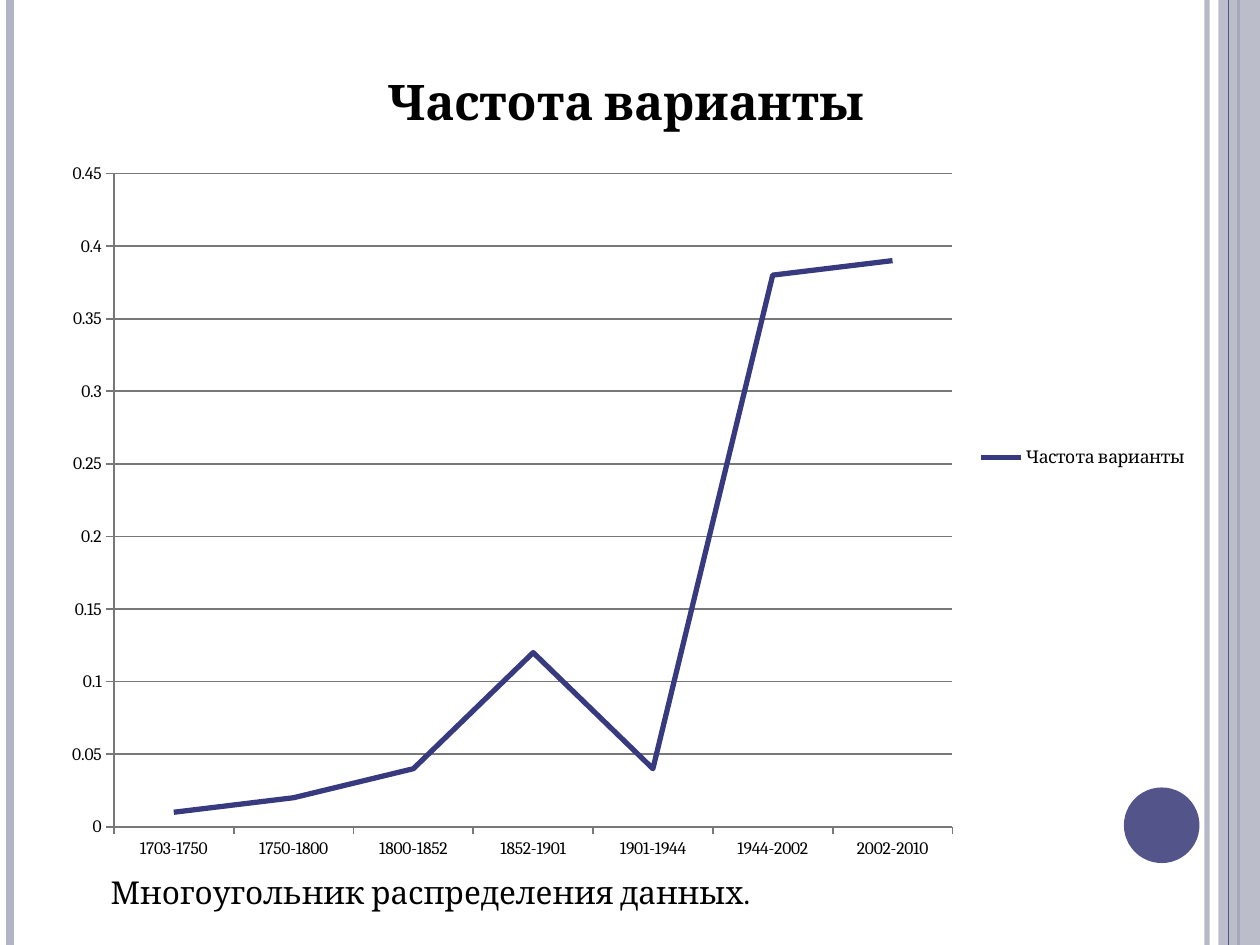
from dataclasses import dataclass

from lxml import etree
from pptx import Presentation
from pptx import util as u
from pptx.chart.data import CategoryChartData
from pptx.dml.color import RGBColor
from pptx.enum import chart as ch
from pptx.enum import shapes, text
from pptx.oxml.ns import qn

WIDTH, HEIGHT = u.Inches(10), u.Inches(7.5)


@dataclass(frozen=True)
class Theme:
    font: str = "Cambria"
    ink: RGBColor = RGBColor.from_string("000000")
    accent: RGBColor = RGBColor.from_string("53548A")
    series: RGBColor = RGBColor.from_string("383A80")
    pale: RGBColor = RGBColor.from_string("B3B4C4")
    grid: RGBColor = RGBColor.from_string("787878")
    title_size: int = 28
    caption_size: int = 18
    label_size: int = 10


THEME = Theme()

PERIODS = ["1703-1750", "1750-1800", "1800-1852", "1852-1901",
           "1901-1944", "1944-2002", "2002-2010"]
FREQUENCIES = [0.01, 0.02, 0.04, 0.12, 0.04, 0.38, 0.39]
FREQUENCY_NAME = "Частота варианты"


def box(left, top, width, height):
    """Turn inches into the four lengths of a frame."""
    return [u.Inches(length) for length in (left, top, width, height)]


def set_alpha(color_parent, percent):
    color = next(color_parent.iter(qn("a:srgbClr")))
    etree.SubElement(color, qn("a:alpha")).set("val", str(percent * 1000))


def style_font(font, size, bold=False):
    font.name = THEME.font
    font.size = u.Pt(size)
    font.bold = bold
    font.color.rgb = THEME.ink


def style_line(line, color, weight):
    line.color.rgb = color
    line.width = u.Pt(weight)


def add_stripe(slide, x, color, weight, opacity=100):
    """Draw a full-height vertical line."""
    stripe = slide.shapes.add_connector(
        shapes.MSO_CONNECTOR.STRAIGHT, u.Inches(x), 0, u.Inches(x), HEIGHT)
    style_line(stripe.line, color, weight)
    properties = stripe._element.spPr
    etree.SubElement(properties, qn("a:effectLst"))
    if opacity < 100:
        set_alpha(properties, opacity)


def add_plain_shape(slide, kind, frame, color, opacity=100):
    shape = slide.shapes.add_shape(kind, *box(*frame))
    shape.shadow.inherit = False
    shape.fill.solid()
    shape.fill.fore_color.rgb = color
    shape.line.fill.background()
    if opacity < 100:
        set_alpha(shape._element.spPr, opacity)


def add_side_decoration(slide):
    add_stripe(slide, 9.58, THEME.pale, 3, opacity=93)
    add_stripe(slide, 0.08, THEME.pale, 4.5)
    add_stripe(slide, 9.83, THEME.accent, 1.5)
    add_plain_shape(slide, shapes.MSO_SHAPE.RECTANGLE,
                    (9.67, 0, 0.33, 7.5), THEME.pale, opacity=87)
    add_stripe(slide, 9.75, THEME.accent, 0.75)
    add_plain_shape(slide, shapes.MSO_SHAPE.OVAL,
                    (8.92, 6.25, 0.6, 0.6), THEME.accent)


def style_axis(axis):
    axis.major_tick_mark = ch.XL_TICK_MARK.OUTSIDE
    axis.minor_tick_mark = ch.XL_TICK_MARK.NONE
    style_line(axis.format.line, THEME.grid, 1)
    style_font(axis.tick_labels.font, THEME.label_size)


def add_frequency_chart(slide):
    data = CategoryChartData(number_format="General")
    data.categories = PERIODS
    data.add_series(FREQUENCY_NAME, FREQUENCIES)
    chart = slide.shapes.add_chart(
        ch.XL_CHART_TYPE.LINE, *box(0.39, 0.31, 9.14, 6.64), data).chart
    style_font(chart.font, THEME.label_size)

    chart.has_title = True
    heading = chart.chart_title.text_frame
    heading.text = FREQUENCY_NAME
    style_font(heading.paragraphs[0].runs[0].font, THEME.title_size, bold=True)
    chart.chart_title.include_in_layout = False

    chart.has_legend = True
    chart.legend.position = ch.XL_LEGEND_POSITION.RIGHT
    chart.legend.include_in_layout = False
    style_font(chart.legend.font, THEME.label_size)

    style_axis(chart.category_axis)
    scale = chart.value_axis
    style_axis(scale)
    scale.minimum_scale, scale.maximum_scale, scale.major_unit = 0, 0.45, 0.05
    scale.has_major_gridlines = True
    style_line(scale.major_gridlines.format.line, THEME.grid, 1)

    plot = chart.plots[0]
    plot.vary_by_categories = False
    frequency = plot.series[0]
    frequency.smooth = False
    frequency.marker.style = ch.XL_MARKER_STYLE.NONE
    style_line(frequency.format.line, THEME.series, 3)


def add_caption(slide, wording):
    frame = slide.shapes.add_textbox(*box(0.78, 6.88, 6.56, 0.4)).text_frame
    frame.word_wrap = True
    frame.auto_size = text.MSO_AUTO_SIZE.SHAPE_TO_FIT_TEXT
    frame.text = wording
    style_font(frame.paragraphs[0].runs[0].font, THEME.caption_size)


def main():
    deck = Presentation()
    deck.slide_width, deck.slide_height = WIDTH, HEIGHT
    slide = deck.slides.add_slide(deck.slide_layouts[6])
    add_side_decoration(slide)
    add_frequency_chart(slide)
    add_caption(slide, "Многоугольник распределения данных.")
    deck.save("out.pptx")


if __name__ == "__main__":
    main()
